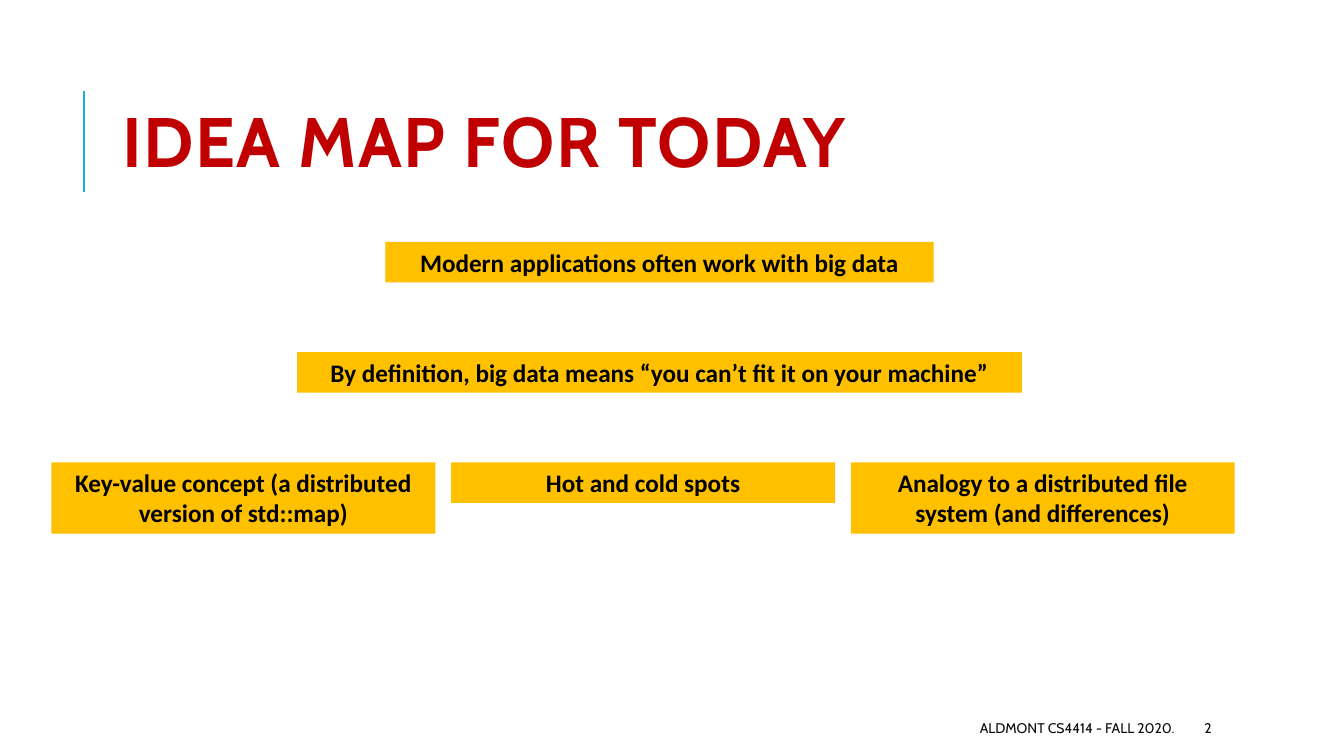
from pptx import Presentation
from pptx.dml.color import RGBColor
from pptx.enum.shapes import MSO_CONNECTOR, MSO_SHAPE
from pptx.enum.text import MSO_ANCHOR, MSO_AUTO_SIZE, PP_ALIGN
from pptx.oxml.ns import qn
from pptx.util import Pt
from lxml.etree import SubElement

RED = RGBColor(0xC0, 0x00, 0x00)
BLUE = RGBColor(0x1C, 0xAD, 0xE4)
GOLD = RGBColor(0xFF, 0xC0, 0x00)
BLACK = RGBColor(0x00, 0x00, 0x00)
NEAR_BLACK = RGBColor(0x0D, 0x0D, 0x0D)

IDEA_ROW_PITCH = 78.7
TOPIC_PITCH = 285.5
TOPIC_WIDTH = 274.3
ONE_LINE, TWO_LINES = 29, 51

OPENING_IDEAS = [
    ("Modern applications often work with big data", 391.7),
    ("By definition, big data means “you can’t fit it on your machine”", 517.7),
]
TOPICS = [
    ("Key-value concept (a distributed version of std::map)", TWO_LINES),
    ("Hot and cold spots", ONE_LINE),
    ("Analogy to a distributed file system (and differences)", TWO_LINES),
]


def write(frame, text, font_name, size, color, align, anchor, bold=False):
    frame.text = text
    frame.word_wrap = True
    frame.auto_size = MSO_AUTO_SIZE.NONE
    frame.vertical_anchor = anchor
    paragraph = frame.paragraphs[0]
    paragraph.alignment = align
    font = paragraph.runs[0].font
    font.name, font.size, font.bold = font_name, Pt(size), bold
    font.color.rgb = color
    return paragraph


def add_heading(slide, left, top, width, height):
    rule_x = left - 20.8
    rule = slide.shapes.add_connector(
        MSO_CONNECTOR.STRAIGHT, Pt(rule_x), Pt(top + 90.8), Pt(rule_x), Pt(top + 18.8))
    rule.line.color.rgb = BLUE
    rule.line.width = Pt(1.5)
    SubElement(rule._element.spPr, qn("a:effectLst"))

    title = slide.shapes.title
    title.left, title.top, title.width, title.height = Pt(left), Pt(top), Pt(width), Pt(height)
    paragraph = write(title.text_frame, "IDEA MAP FOR TODAY", "Cabin", 50, RED,
                      PP_ALIGN.LEFT, MSO_ANCHOR.MIDDLE, bold=True)
    paragraph.line_spacing = 0.8
    paragraph.runs[0].font._element.set("spc", "100")


def add_idea(slide, text, left, top, width, height):
    idea = slide.shapes.add_shape(MSO_SHAPE.RECTANGLE, Pt(left), Pt(top), Pt(width), Pt(height))
    idea.shadow.inherit = False
    idea.fill.solid()
    idea.fill.fore_color.rgb = GOLD
    idea.line.fill.background()
    write(idea.text_frame, text, "Calibri", 18, BLACK, PP_ALIGN.CENTER, MSO_ANCHOR.TOP, bold=True)
    idea.text_frame.auto_size = MSO_AUTO_SIZE.SHAPE_TO_FIT_TEXT


def add_idea_map(slide, left, top, width):
    center = left + width / 2
    for row, (text, idea_width) in enumerate(OPENING_IDEAS):
        add_idea(slide, text, center - idea_width / 2, top + row * IDEA_ROW_PITCH,
                 idea_width, ONE_LINE)
    topics_top = top + len(OPENING_IDEAS) * IDEA_ROW_PITCH
    for column, (text, height) in enumerate(TOPICS):
        add_idea(slide, text, left + column * TOPIC_PITCH, topics_top, TOPIC_WIDTH, height)


def add_footer(slide, left, top, width, height):
    number_width = 76.3
    course_width = width - number_width - 7.2
    for text, x, part_width, align in (
        ("ALDMONT CS4414 - FALL 2020.", left, course_width, PP_ALIGN.RIGHT),
        ("2", left + width - number_width, number_width, PP_ALIGN.LEFT),
    ):
        part = slide.shapes.add_textbox(Pt(x), Pt(top), Pt(part_width), Pt(height))
        write(part.text_frame, text, "Cabin", 10, NEAR_BLACK, align, MSO_ANCHOR.MIDDLE)


def main():
    presentation = Presentation()
    presentation.slide_width, presentation.slide_height = Pt(960), Pt(540)
    slide = presentation.slides.add_slide(presentation.slide_layouts[5])
    add_heading(slide, 80.6, 46, 849.6, 118)
    add_footer(slide, 381.6, 509.4, 547.9, 21.6)
    add_idea_map(slide, 36.7, 172.8, 868.8)
    presentation.save("out.pptx")


if __name__ == "__main__":
    main()
